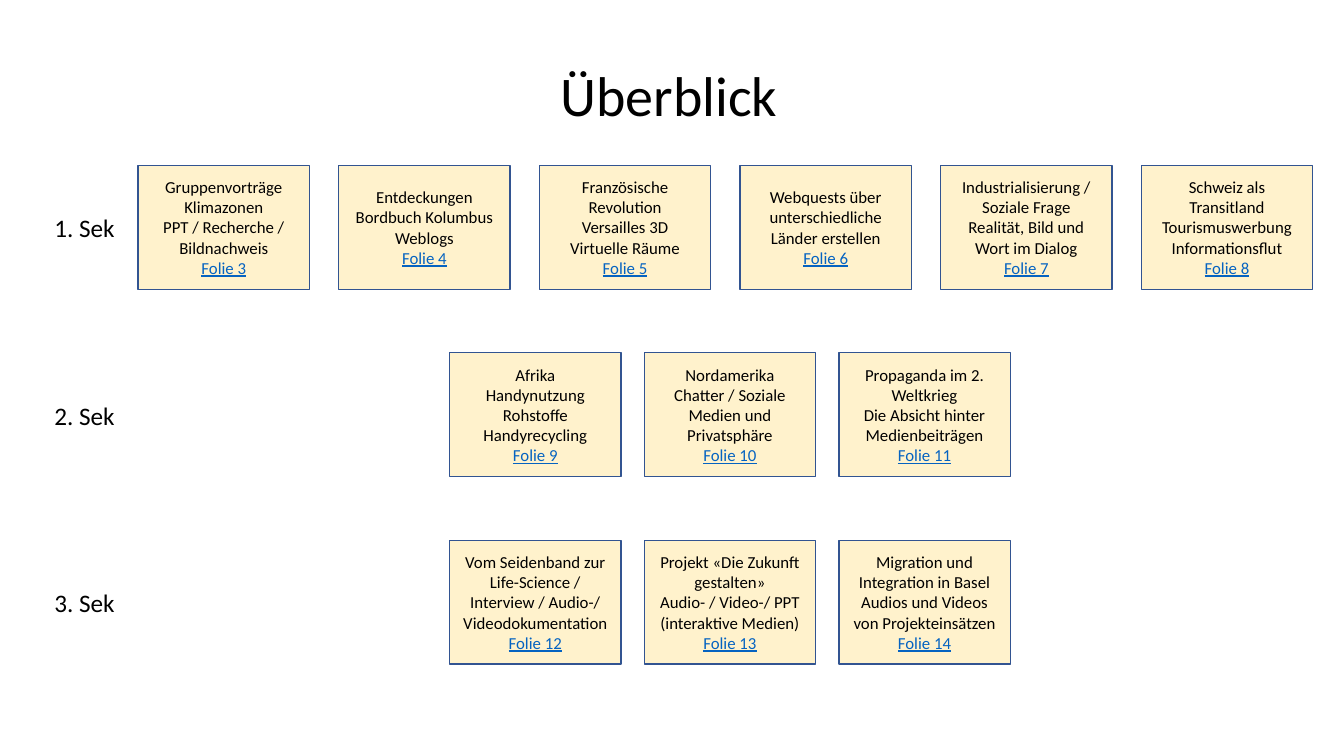
"""Builds the overview slide of media topics for three school years."""
import itertools

import pptx
import pptx.dml.color
import pptx.enum.shapes
import pptx.enum.text
import pptx.util

Inches = pptx.util.Inches
Pt = pptx.util.Pt
RGBColor = pptx.dml.color.RGBColor
Align = pptx.enum.text.PP_ALIGN
Anchor = pptx.enum.text.MSO_ANCHOR

BLACK = RGBColor(0x00, 0x00, 0x00)
CREAM = RGBColor(0xFF, 0xF2, 0xCC)
BLUE = RGBColor(0x32, 0x54, 0x91)
LINK_BLUE = RGBColor(0x05, 0x63, 0xC1)

CARD_WIDTH, CARD_HEIGHT = 1.7, 1.23
FIRST_ROW_TOP, ROW_STEP = 1.64, 1.86
LABEL_OFFSET = 0.42
FIRST_FOLIE = 3

YEARS = [
    ("1. Sek", 1.37, 1.99, [
        ["Gruppenvorträge", "Klimazonen", "PPT / Recherche / Bildnachweis"],
        ["Entdeckungen", "Bordbuch Kolumbus", "Weblogs"],
        ["Französische Revolution", "Versailles 3D", "Virtuelle Räume"],
        ["Webquests über unterschiedliche Länder erstellen"],
        ["Industrialisierung / Soziale Frage", "Realität, Bild und Wort im Dialog"],
        ["Schweiz als Transitland", "Tourismuswerbung Informationsflut"],
    ]),
    ("2. Sek", 4.46, 1.93, [
        ["Afrika", "Handynutzung Rohstoffe Handyrecycling"],
        ["Nordamerika", "Chatter / Soziale Medien und", "Privatsphäre"],
        ["Propaganda im 2. Weltkrieg", "Die Absicht hinter Medienbeiträgen"],
    ]),
    ("3. Sek", 4.46, 1.93, [
        ["Vom Seidenband zur Life-Science / Interview / Audio-/ Videodokumentation"],
        ["Projekt «Die Zukunft gestalten»", "Audio- / Video-/ PPT", "(interaktive Medien)"],
        ["Migration und Integration in Basel Audios und Videos von Projekteinsätzen"],
    ]),
]


class OverviewPage:
    """Holds the text style and the current slide."""

    font_name = "Calibri"

    def __init__(self, deck):
        self.page = deck.slides.add_slide(deck.slide_layouts[5])

    def add_span(self, para, text, size, color=BLACK, underline=None):
        span = para.add_run()
        span.text = text
        span.font.name = self.font_name
        span.font.size = Pt(size)
        span.font.color.rgb = color
        span.font.underline = underline

    def title(self, text, left, top, width, height):
        box = self.page.shapes.title
        box.left, box.top = Inches(left), Inches(top)
        box.width, box.height = Inches(width), Inches(height)
        frame = box.text_frame
        frame.auto_size = pptx.enum.text.MSO_AUTO_SIZE.NONE
        frame.word_wrap = False
        frame.vertical_anchor = Anchor.TOP
        frame.paragraphs[0].alignment = Align.LEFT
        self.add_span(frame.paragraphs[0], text, 40)

    def label(self, text, left, top):
        box = self.page.shapes.add_textbox(
            Inches(left), Inches(top), Inches(0.92), Inches(0.4))
        self.add_span(box.text_frame.paragraphs[0], text, 18)

    def card(self, lines, folie, left, top):
        box = self.page.shapes.add_shape(
            pptx.enum.shapes.MSO_SHAPE.RECTANGLE,
            Inches(left), Inches(top), Inches(CARD_WIDTH), Inches(CARD_HEIGHT))
        box.shadow.inherit = False
        box.fill.solid()
        box.fill.fore_color.rgb = CREAM
        box.line.color.rgb = BLUE
        box.line.width = Pt(1)
        frame = box.text_frame
        frame.word_wrap = True
        frame.vertical_anchor = Anchor.MIDDLE
        para = frame.paragraphs[0]
        for line in lines:
            para.alignment = Align.CENTER
            self.add_span(para, line, 12)
            para = frame.add_paragraph()
        para.alignment = Align.CENTER
        self.add_span(para, f"Folie {folie}", 12, LINK_BLUE, True)


def main():
    deck = pptx.Presentation()
    deck.slide_width, deck.slide_height = Inches(13.33), Inches(7.5)
    overview = OverviewPage(deck)
    overview.title("Überblick", 5.46, 0.55, 2.41, 0.77)
    folie_numbers = itertools.count(FIRST_FOLIE)
    for row, (year, left, step, topics) in enumerate(YEARS):
        top = FIRST_ROW_TOP + row * ROW_STEP
        overview.label(year, 0.44, top + LABEL_OFFSET)
        for column, lines in enumerate(topics):
            overview.card(lines, next(folie_numbers), left + column * step, top)
    deck.save("out.pptx")


if __name__ == "__main__":
    main()
